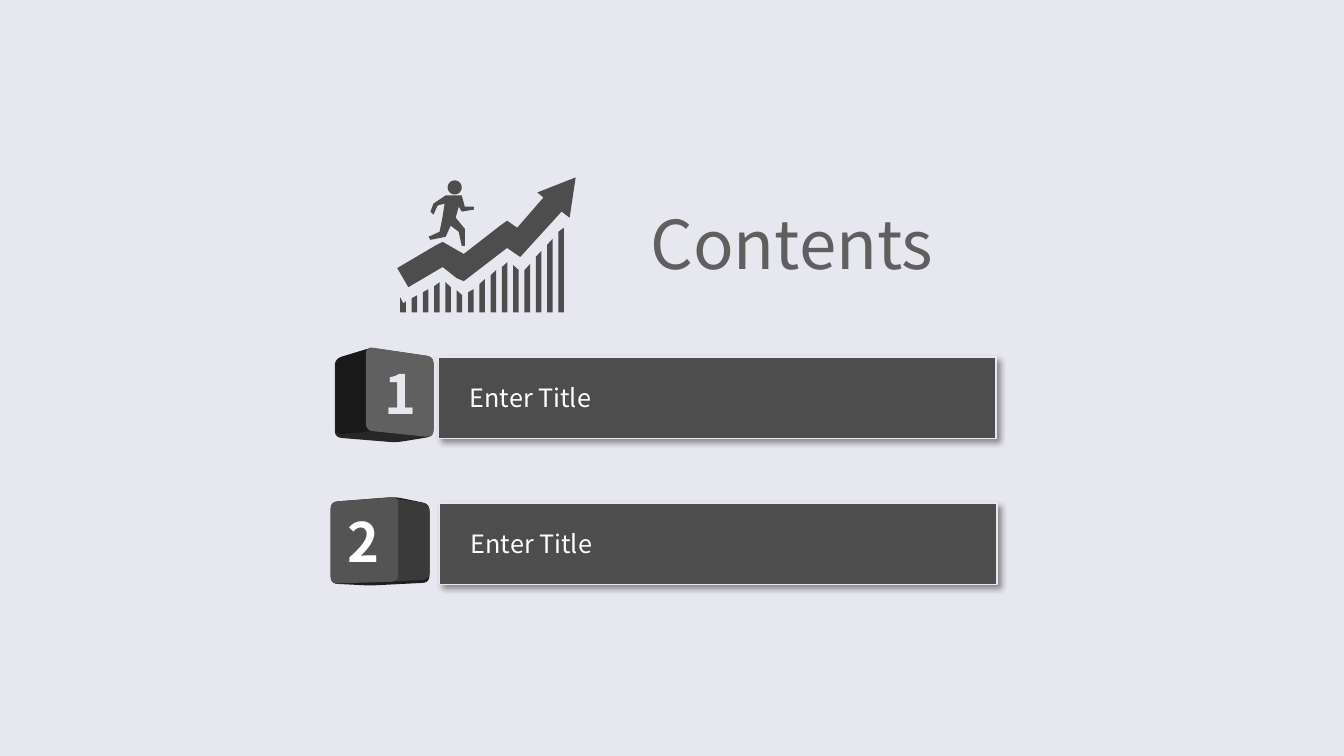
from math import cos, pi, sin

from lxml.etree import SubElement
from pptx import Presentation
from pptx.dml.color import RGBColor
from pptx.enum.shapes import MSO_SHAPE as Shape
from pptx.enum.text import MSO_ANCHOR as Anchor, PP_ALIGN as Align
from pptx.oxml.ns import qn
from pptx.util import Inches, Pt

FONT = "Noto Sans CJK JP"
COLORS = {
    "back": "E7E7EF", "dark": "4D4D4D", "title": "5F5F5F", "white": "FFFFFF",
    "shadow": "000000", "front1": "606060", "side1": "191919", "base1": "272727",
    "front2": "545454", "side2": "3A3A3A", "base2": "1E1E1E",
}

# Content: each entry has a bar and a numbered cube
ENTRIES = [
    {"number": "1", "color": "back", "text": "Enter Title",
     "bar": (4.35, 3.54), "face": (3.56, 3.49),
     "cube": [
         ("base1", [(3.32, 3.56), (3.68, 3.45), (4.3, 3.54), (4.3, 4.33), (3.93, 4.39), (3.32, 4.34)]),
         ("side1", [(3.33, 3.56), (3.69, 3.45), (3.69, 4.28), (3.33, 4.31)]),
         ("front1", [(3.63, 3.44), (4.3, 3.54), (4.3, 4.34), (3.63, 4.27)])]},
    {"number": "2", "color": "white", "text": "Enter Title",
     "bar": (4.36, 4.99), "face": (3.19, 4.96),
     "cube": [
         ("base2", [(3.28, 4.98), (3.92, 4.93), (4.26, 5), (4.26, 5.78), (3.67, 5.81), (3.28, 5.79)]),
         ("side2", [(3.88, 4.94), (4.26, 5), (4.26, 5.75), (3.88, 5.77)]),
         ("front2", [(3.28, 4.98), (3.95, 4.93), (3.95, 5.77), (3.28, 5.79)])]},
]

# Icon: chart bars (left and right top), zigzag arrow and runner
BAR_TOPS = [(2.95, 2.99), (2.96, 2.93), (2.9, 2.87), (2.84, 2.8), (2.8, 2.85),
            (2.88, 2.93), (2.9, 2.87), (2.82, 2.77), (2.73, 2.68), (2.65, 2.6),
            (2.63, 2.68), (2.68, 2.62), (2.55, 2.49), (2.43, 2.37), (2.3, 2.26)]
BAR_LEFT, BAR_STEP, BAR_WIDTH, BAR_BOTTOM = 3.97, 0.112, 0.055, 3.1
NOTCH = (4, 3.01)
ARROW = [(3.94, 2.66), (4.05, 2.85), (4.39, 2.65), (4.53, 2.76), (4.6, 2.79),
         (5.03, 2.46), (5.16, 2.55), (5.57, 2.1), (5.65, 2.16), (5.71, 1.76),
         (5.33, 1.91), (5.39, 1.96), (5.13, 2.26), (5.03, 2.19), (4.96, 2.24),
         (4.6, 2.52), (4.39, 2.4), (4.33, 2.43)]
BODY = [(4.27, 2.1), (4.3, 2.02), (4.42, 1.94), (4.58, 1.94), (4.61, 2.05),
        (4.7, 2.05), (4.7, 2.08), (4.58, 2.1), (4.55, 2.05), (4.52, 2.16),
        (4.61, 2.27), (4.61, 2.44), (4.58, 2.44), (4.55, 2.3), (4.47, 2.24),
        (4.42, 2.35), (4.27, 2.38), (4.25, 2.35), (4.36, 2.3), (4.39, 2.15),
        (4.41, 2.02), (4.34, 2.04), (4.3, 2.13)]
HEAD = [(4.51 + 0.07 * cos(i * pi / 12), 1.86 + 0.07 * sin(i * pi / 12))
        for i in range(24)]


def rgb(name):
    return RGBColor.from_string(COLORS[name])


def paint(sp, fill=None, line=None):
    sp.shadow.inherit = False
    if fill:
        sp.fill.solid()
        sp.fill.fore_color.rgb = rgb(fill)
    else:
        sp.fill.background()
    if line:
        sp.line.color.rgb = rgb(line)
        sp.line.width = Pt(1)
    else:
        sp.line.fill.background()


def write(sp, text, size, color, align=Align.LEFT, bold=False, **frame):
    tf = sp.text_frame
    for name, value in frame.items():
        setattr(tf, name, value)
    p = tf.paragraphs[0]
    p.alignment = align
    r = p.add_run()
    r.text = text
    for name, value in {"name": FONT, "size": Pt(size), "bold": bold}.items():
        setattr(r.font, name, value)
    r.font.color.rgb = rgb(color)


def outline(shapes, contours, fill):
    builder = None
    for contour in contours:
        points = [(Inches(x), Inches(y)) for x, y in contour]
        if builder is None:
            builder = shapes.build_freeform(*points[0], scale=1)
        else:
            builder.move_to(*points[0])
        builder.add_line_segments(points[1:], close=True)
    paint(builder.convert_to_shape(), fill)


def rounded(corners, cut=0.07, steps=5):
    """Replace each corner by a short quadratic curve."""
    points = []
    for i, (x, y) in enumerate(corners):
        ends = []
        for nx, ny in (corners[i - 1], corners[(i + 1) % len(corners)]):
            part = cut / ((nx - x) ** 2 + (ny - y) ** 2) ** 0.5
            ends.append((x + (nx - x) * part, y + (ny - y) * part))
        (ax, ay), (bx, by) = ends
        for t in (k / steps for k in range(steps + 1)):
            a, c, b = (1 - t) ** 2, 2 * t * (1 - t), t ** 2
            points.append((a * ax + c * x + b * bx, a * ay + c * y + b * by))
    return points


def drop_shadow(sp):
    effects = sp._element.spPr.find(qn("a:effectLst"))
    shadow = SubElement(effects, qn("a:outerShdw"), blurRad=str(Pt(4)),
                        dist=str(Pt(3)), dir="2700000", algn="tl", rotWithShape="0")
    color = SubElement(shadow, qn("a:srgbClr"), val=COLORS["shadow"])
    SubElement(color, qn("a:alpha"), val="40000")


def box(shapes, kind, place, size):
    return shapes.add_shape(kind, *(Inches(v) for v in place + size))


prs = Presentation()
prs.slide_width, prs.slide_height = Inches(13.33), Inches(7.5)
slide = prs.slides.add_slide(prs.slide_layouts[6])
slide.background.fill.solid()
slide.background.fill.fore_color.rgb = rgb("back")
shapes = slide.shapes

# Title
title = shapes.add_textbox(Inches(6.35), Inches(1.96), Inches(2.96), Inches(0.94))
write(title, "Contents", 48, "title", word_wrap=False, margin_right=0)

# Growth icon
bars = []
for i, (left_top, right_top) in enumerate(BAR_TOPS):
    x = BAR_LEFT + i * BAR_STEP
    bars.append([(x, left_top), (x + BAR_WIDTH, right_top),
                 (x + BAR_WIDTH, BAR_BOTTOM), (x, BAR_BOTTOM)])
bars[0].insert(1, NOTCH)
outline(shapes, [HEAD, BODY, ARROW] + bars, "dark")

# Entries
for entry in ENTRIES:
    bar = box(shapes, Shape.RECTANGLE, entry["bar"], (5.53, 0.81))
    paint(bar, "dark", "back")
    drop_shadow(bar)
    write(bar, entry["text"], 18, "white", word_wrap=True,
          vertical_anchor=Anchor.MIDDLE,
          margin_left=Inches(0.31), margin_right=Inches(0.31))
    for fill, corners in entry["cube"]:
        outline(shapes, [rounded(corners)], fill)
    face = box(shapes, Shape.ROUNDED_RECTANGLE, entry["face"], (0.82, 0.82))
    face.adjustments[0] = 0.09
    paint(face)
    write(face, entry["number"], 38.7, entry["color"], Align.CENTER, True,
          word_wrap=True, vertical_anchor=Anchor.MIDDLE)

prs.save("out.pptx")
